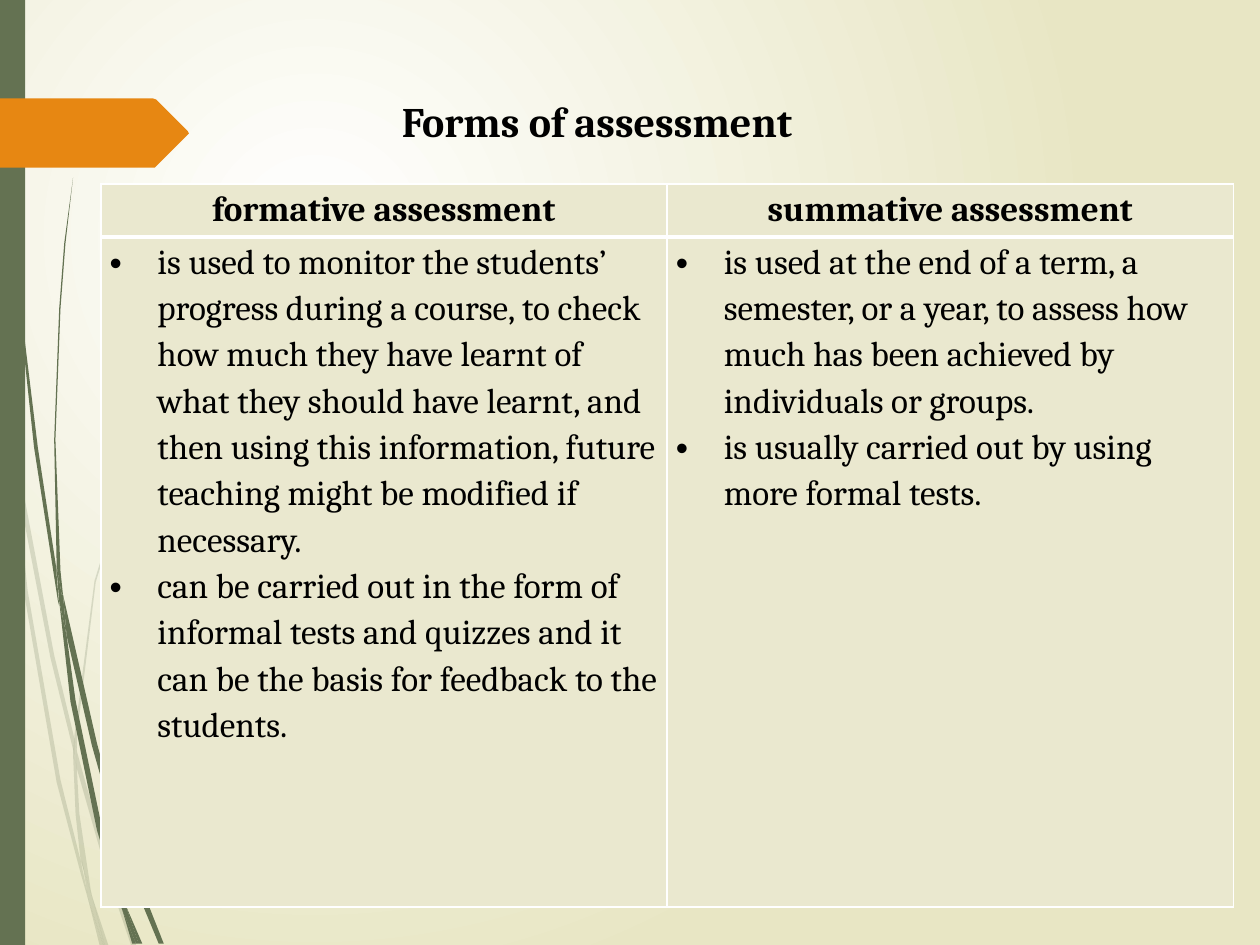
from lxml import etree
from pptx import Presentation
from pptx.dml.color import RGBColor
from pptx.enum.shapes import MSO_SHAPE
from pptx.enum.text import PP_ALIGN
from pptx.oxml.ns import qn
from pptx.util import Inches, Pt

RECT = MSO_SHAPE.RECTANGLE
CENTER = PP_ALIGN.CENTER
GREEN = RGBColor(0x64, 0x72, 0x52)
ORANGE = RGBColor(0xE7, 0x87, 0x12)
CREAM = RGBColor(0xEA, 0xE8, 0xCF)
SAND = RGBColor(0xE8, 0xE6, 0xC4)
WHITE = RGBColor(0xFF, 0xFF, 0xFF)
BLACK = RGBColor(0, 0, 0)
FONT = "Cambria"

TITLE = "Forms of assessment"
FORMS = [
    ("formative assessment", [
        "is used to monitor the students’ progress during a course, to check how much "
        "they have learnt of what they should have learnt, and then using this "
        "information, future teaching might be modified if necessary.",
        "can be carried out in the form of informal tests and quizzes and it can be "
        "the basis for feedback to the students.",
    ]),
    ("summative assessment", [
        "is used at the end of a term, a semester, or a year, to assess how much has "
        "been achieved by individuals or groups.",
        "is usually carried out by using more formal tests.",
    ]),
]

# Outline points in hundredths of an inch
PALE = [
    [(8, 350), (6, 322), (0, 282), (0, 299), (7, 344)],
    [(40, 522), (59, 599), (59, 586), (43, 520), (10, 345), (12, 376)],
    [(64, 607), (61, 596), (61, 610), (85, 694), (104, 750), (108, 750), (88, 692)],
    [(83, 750), (86, 750), (73, 711)],
    [(64, 683), (48, 619), (22, 469), (12, 376), (8, 350), (19, 470), (45, 621),
     (64, 693), (70, 714), (69, 707)],
    [(58, 599), (60, 646), (64, 683), (67, 692), (73, 711), (72, 706), (63, 646),
     (61, 610), (61, 608)],
    [(61, 584), (76, 462), (111, 349), (159, 245), (187, 198), (201, 175), (217, 154),
     (217, 153), (201, 175), (186, 197), (158, 244), (110, 348), (75, 461), (59, 584),
     (59, 586), (61, 596)],
    [(70, 714), (79, 750), (82, 750)],
    [(61, 608), (61, 610), (61, 596), (59, 586), (58, 599)],
    [(67, 692), (65, 683), (69, 707), (70, 714), (82, 750), (83, 750), (73, 711)],
]
DARK = [
    [(5, 110), (14, 233), (27, 355), (46, 477), (47, 481), (45, 457), (45, 453),
     (30, 355), (15, 232), (6, 109), (4, 48), (3, 0), (2, 0), (3, 48)],
    [(73, 592), (88, 645), (88, 633), (88, 631), (77, 590), (50, 472), (53, 505)],
    [(94, 649), (91, 641), (91, 656), (109, 708), (126, 749), (130, 749), (113, 706)],
    [(91, 691), (81, 657), (60, 556), (53, 505), (47, 477), (56, 557), (77, 659),
     (92, 708), (97, 722), (96, 717)],
    [(50, 472), (48, 453), (44, 349), (48, 245), (52, 193), (58, 141), (51, 193),
     (47, 245), (43, 349), (45, 449), (49, 472)],
    [(110, 749), (113, 749), (100, 719)],
    [(47, 477), (53, 505), (50, 472), (49, 472), (45, 449), (45, 453)],
    [(91, 633), (103, 552), (131, 476), (169, 406), (191, 374), (203, 359), (216, 344),
     (215, 344), (203, 358), (191, 373), (168, 405), (129, 474), (101, 551), (88, 631),
     (91, 641)],
    [(97, 722), (105, 749), (108, 749)],
    [(88, 645), (91, 691), (96, 706), (100, 719), (100, 716), (91, 656), (90, 651)],
    [(88, 645), (90, 651), (91, 656), (91, 641), (88, 631), (88, 633)],
    [(96, 706), (91, 691), (96, 717), (97, 722), (108, 749), (110, 749), (100, 719)],
]
ARROW = [(149, 107), (124, 132), (123, 133), (0, 133), (0, 78), (121, 78), (124, 79),
         (149, 104), (150, 106)]


def paint(shape, color):
    shape.shadow.inherit = False
    shape.fill.solid()
    shape.fill.fore_color.rgb = color
    shape.line.fill.background()


def outline(shapes, points, color):
    pen = shapes.build_freeform(*points[0], scale=Inches(0.01))
    pen.add_line_segments(points[1:], close=True)
    shape = pen.convert_to_shape()
    paint(shape, color)
    return shape


def style(par, size, bold):
    par.line_spacing = 1.15
    font = par.font
    font.name, font.size, font.bold = FONT, Pt(size), bold
    font.color.rgb = BLACK


def bullet(par):
    props = par._p.get_or_add_pPr()
    props.set("marL", str(Inches(0.38)))
    props.set("indent", str(Inches(-0.38)))
    etree.SubElement(props, qn("a:buFont"), typeface="Arial")
    etree.SubElement(props, qn("a:buChar"), char="•")


def border(cell, widths):
    props = cell._tc.get_or_add_tcPr()
    for i, (side, width) in enumerate(zip("LRTB", widths)):
        line = etree.Element(qn(f"a:ln{side}"), w=str(Pt(width)))
        fill = etree.SubElement(line, qn("a:solidFill"))
        etree.SubElement(fill, qn("a:srgbClr"), val=str(WHITE))
        props.insert(i, line)


def fill_cell(cell, texts, head):
    cell.margin_left = cell.margin_right = Inches(0.07)
    cell.margin_top = cell.margin_bottom = 0
    border(cell, (1, 1, 1, 3) if head else (1, 1, 3, 1))
    cell.fill.solid()
    cell.fill.fore_color.rgb = CREAM
    frame = cell.text_frame
    for i, text in enumerate(texts):
        par = frame.add_paragraph() if i else frame.paragraphs[0]
        par.text = text
        style(par, 20, head)
        if head:
            par.alignment = CENTER
            par.space_after = Pt(10)
        else:
            bullet(par)


def backdrop(slide):
    fill = slide.background.fill
    fill.gradient()
    for stop, color in zip(fill.gradient_stops, (WHITE, SAND)):
        stop.color.rgb = color
    line = slide._element.find(".//" + qn("a:lin"))
    glow = etree.Element(qn("a:path"), path="circle")
    etree.SubElement(glow, qn("a:fillToRect"), l="50000", t="50000",
                     r="100000", b="100000")
    line.getparent().replace(line, glow)


def main():
    deck = Presentation()
    deck.slide_width, deck.slide_height = Inches(10), Inches(7.5)
    slide = deck.slides.add_slide(deck.slide_layouts[6])
    shapes = slide.shapes
    backdrop(slide)

    for blades, alpha in ((PALE, 20), (DARK, 100)):
        group = shapes.add_group_shape()
        for points in blades:
            blade = outline(group.shapes, points, GREEN)
            if alpha < 100:
                tint = blade._element.spPr.find(".//" + qn("a:srgbClr"))
                etree.SubElement(tint, qn("a:alpha"), val=str(alpha * 1000))

    bar = shapes.add_shape(RECT, 0, 0, Inches(0.2), Inches(7.5))
    paint(bar, GREEN)
    outline(shapes, ARROW, ORANGE)

    table = shapes.add_table(2, len(FORMS), Inches(0.8), Inches(1.46),
                             Inches(8.99), Inches(5.74)).table
    for row, height in zip(table.rows, (0.42, 5.32)):
        row.height = Inches(height)
    for col, (head, points) in enumerate(FORMS):
        fill_cell(table.cell(0, col), [head], True)
        fill_cell(table.cell(1, col), points, False)

    box = shapes.add_textbox(Inches(3.09), Inches(0.65), Inches(4.38), Inches(0.57))
    box.text_frame.word_wrap = True
    par = box.text_frame.paragraphs[0]
    par.text = TITLE
    style(par, 24, True)

    deck.save("out.pptx")


if __name__ == "__main__":
    main()
